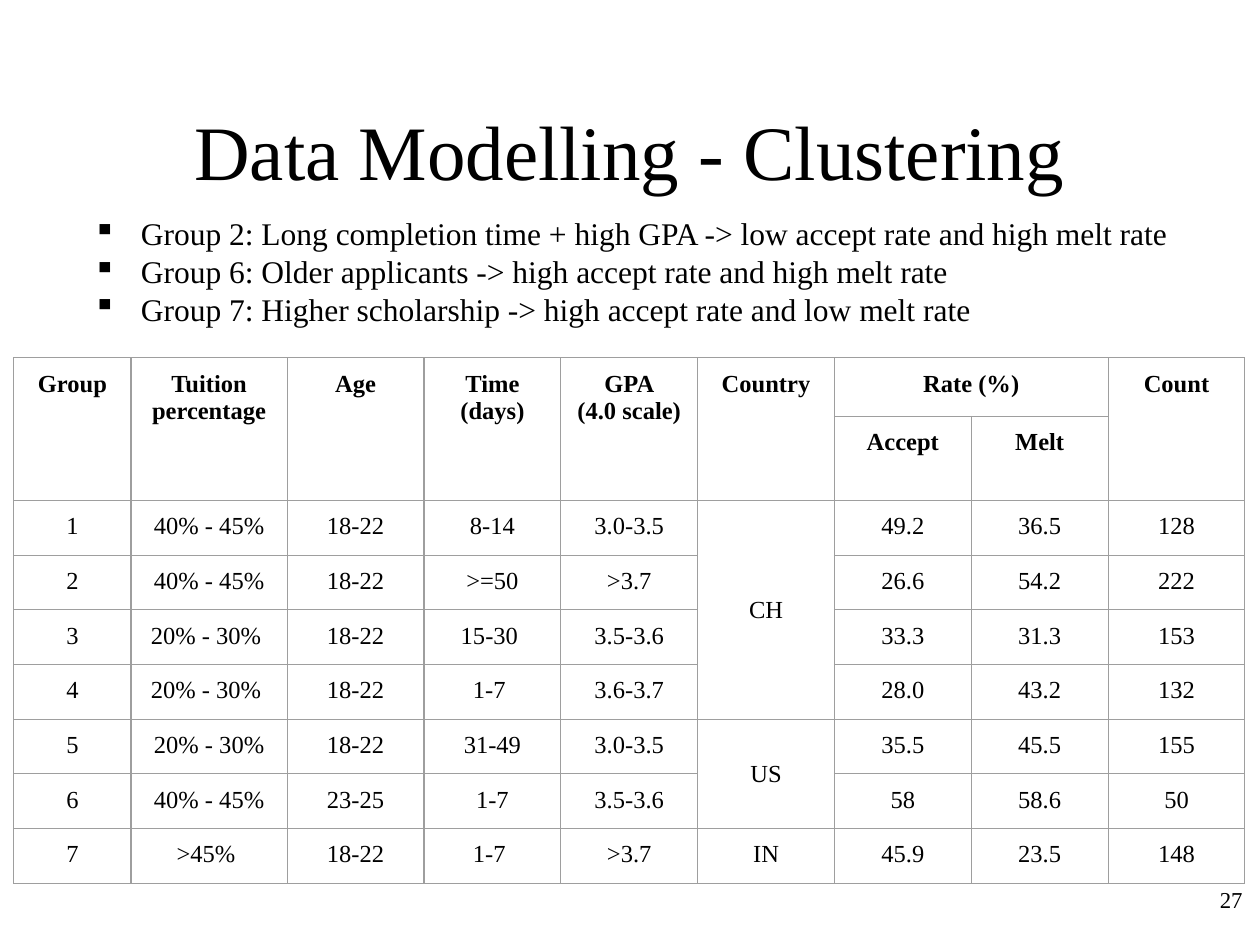
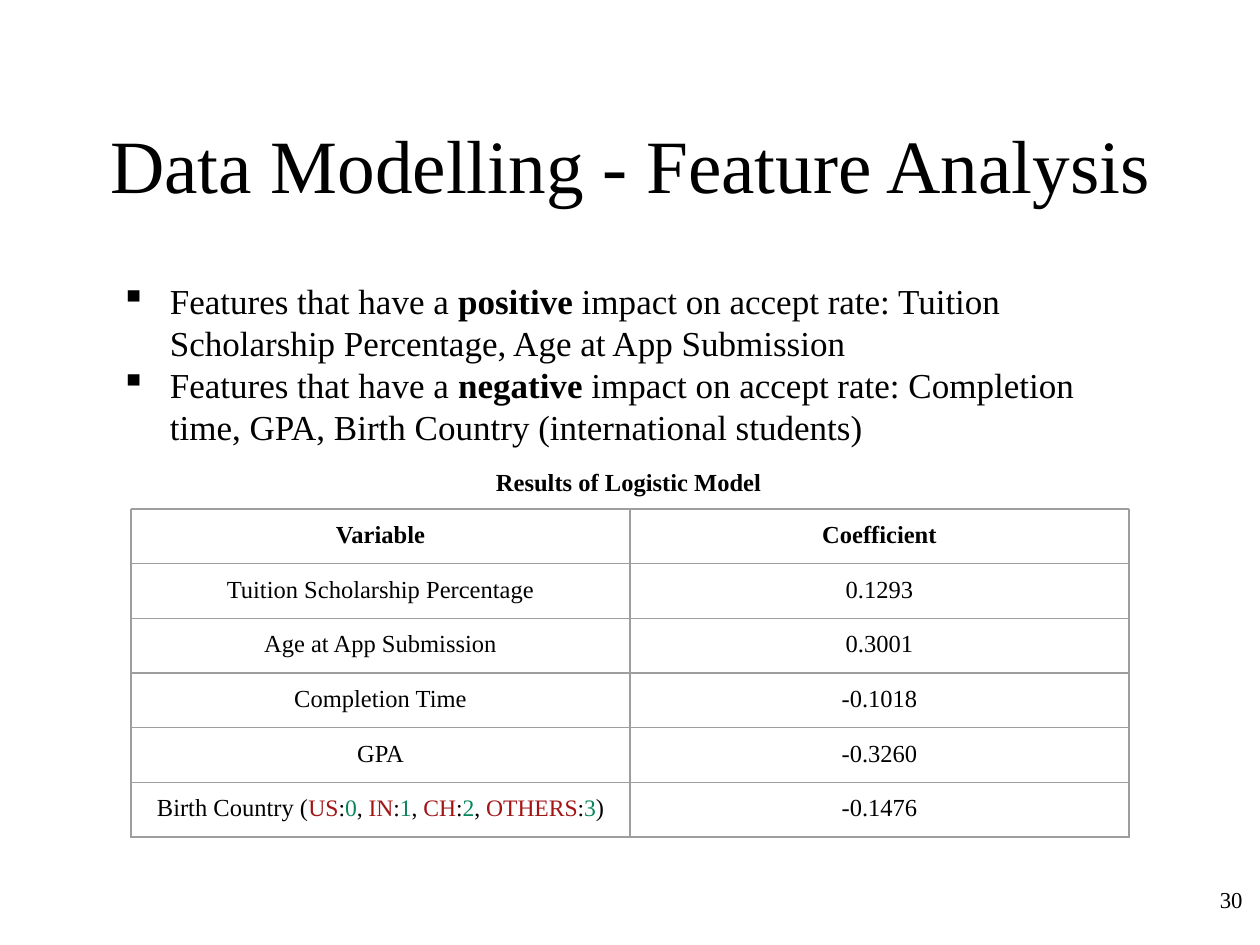
from dataclasses import dataclass
from typing import NamedTuple

from lxml.etree import SubElement
from pptx import Presentation
from pptx.dml.color import RGBColor
from pptx.enum.text import MSO_ANCHOR, PP_ALIGN
from pptx.oxml import parse_xml
from pptx.oxml.ns import nsdecls, qn
from pptx.util import Emu, Inches, Pt

SLIDE_WIDTH, SLIDE_HEIGHT = Inches(10), Inches(7.5)
COLUMN, ROW = SLIDE_WIDTH / 100, SLIDE_HEIGHT / 75
FONT = "Times New Roman"
COLORS = {"text": "000000", "border": "9E9E9E", "country": "A31515", "code": "098658"}
CELL_SIZE = 14
BORDER_WIDTH = 0.75
TEXT_INSET, CELL_INSET = 0.5, 1


class Run(NamedTuple):
    text: str
    bold: bool = False
    color: str = "text"
    size: float | None = None


class Box(NamedTuple):
    """Place and size in grid columns and rows."""
    left: float
    top: float
    width: float
    height: float


class Span(NamedTuple):
    top: int
    left: int
    bottom: int
    right: int


@dataclass
class TableSpec:
    left: float
    top: float
    column_widths: list[float]
    row_heights: list[float]
    cells: list[list]
    header_rows: int = 1
    spans: tuple[Span, ...] = ()


def across(columns: float) -> Emu:
    return Emu(round(columns * COLUMN))


def down(rows: float) -> Emu:
    return Emu(round(rows * ROW))


def add_bullet(paragraph, hanging: float) -> None:
    properties = paragraph._p.get_or_add_pPr()
    properties.set("marL", str(across(5)))
    properties.set("indent", str(-across(hanging)))
    color = SubElement(SubElement(properties, qn("a:buClr")), qn("a:srgbClr"))
    color.set("val", COLORS["text"])
    SubElement(properties, qn("a:buChar")).set("char", "▪")


def write_text(frame, paragraphs: list, *, size: float, bold: bool = False,
               align=PP_ALIGN.LEFT, hanging: float | None = None) -> None:
    """Each paragraph is a string or a list of runs; hanging adds a bullet."""
    for index, content in enumerate(paragraphs):
        paragraph = frame.paragraphs[0] if index == 0 else frame.add_paragraph()
        paragraph.alignment = align
        if hanging is not None:
            add_bullet(paragraph, hanging)
        runs = [Run(content, bold)] if isinstance(content, str) else content
        for item in runs:
            run = paragraph.add_run()
            run.text = item.text
            run.font.name = FONT
            run.font.size = Pt(item.size or size)
            run.font.bold = item.bold
            run.font.color.rgb = RGBColor.from_string(COLORS[item.color])


def set_margins(target, side: float, vertical: float) -> None:
    target.margin_left = target.margin_right = across(side)
    target.margin_top = target.margin_bottom = down(vertical)


def add_text(slide, box: Box, paragraphs: list, *, inset: float = TEXT_INSET,
             anchor=MSO_ANCHOR.TOP, **text_format) -> None:
    shape = slide.shapes.add_textbox(across(box.left), down(box.top),
                                     across(box.width), down(box.height))
    frame = shape.text_frame
    frame.word_wrap = True
    frame.vertical_anchor = anchor
    set_margins(frame, CELL_INSET, inset)
    write_text(frame, paragraphs, **text_format)


def add_borders(cell) -> None:
    properties = cell._tc.get_or_add_tcPr()
    for index, side in enumerate(("lnL", "lnR", "lnT", "lnB")):
        properties.insert(index, parse_xml(
            f'<a:{side} {nsdecls("a")} w="{Pt(BORDER_WIDTH)}"><a:solidFill>'
            f'<a:srgbClr val="{COLORS["border"]}"/></a:solidFill></a:{side}>'))


def add_table(slide, spec: TableSpec) -> None:
    frame = slide.shapes.add_table(
        len(spec.row_heights), len(spec.column_widths), across(spec.left), down(spec.top),
        across(sum(spec.column_widths)), down(sum(spec.row_heights)))
    table = frame.table
    table.first_row = table.horz_banding = False
    for column, width in zip(table.columns, spec.column_widths):
        column.width = across(width)
    for row, height in zip(table.rows, spec.row_heights):
        row.height = down(height)
    for span in spec.spans:
        table.cell(span.top, span.left).merge(table.cell(span.bottom, span.right))
    for row_index, values in enumerate(spec.cells):
        header = row_index < spec.header_rows
        for column_index, value in enumerate(values):
            cell = table.cell(row_index, column_index)
            cell.fill.background()
            add_borders(cell)
            set_margins(cell, CELL_INSET, CELL_INSET)
            if value is None:
                continue
            if not header and cell.is_merge_origin:
                cell.vertical_anchor = MSO_ANCHOR.MIDDLE
            paragraphs = value.split("\n") if isinstance(value, str) else [value]
            write_text(cell.text_frame, paragraphs, size=CELL_SIZE, bold=header,
                       align=PP_ALIGN.CENTER)


def add_titled_slide(presentation, title: str, number: int, *, top: float, size: float):
    slide = presentation.slides.add_slide(presentation.slide_layouts[6])
    add_text(slide, Box(7.5, top, 85, 12.5), [title], size=size,
             align=PP_ALIGN.CENTER, anchor=MSO_ANCHOR.MIDDLE)
    add_text(slide, Box(93.6, 69.3, 6, 5.7), [str(number)], size=13,
             align=PP_ALIGN.RIGHT, inset=CELL_INSET)
    return slide


CLUSTERS = TableSpec(
    left=1.1, top=28.4,
    column_widths=[9.3, 12.4] + [10.86] * 7,
    row_heights=[4.65, 6.3] + [4.14] * 7,
    header_rows=2,
    cells=[
        ["Group", "Tuition\npercentage", "Age", "Time\n(days)", "GPA\n(4.0 scale)",
         "Country", "Rate (%)", None, "Count"],
        [None] * 6 + ["Accept", "Melt", None],
        ["1", "40% - 45%", "18-22", "8-14", "3.0-3.5", "CH", "49.2", "36.5", "128"],
        ["2", "40% - 45%", "18-22", ">=50", ">3.7", None, "26.6", "54.2", "222"],
        ["3", "20% - 30% ", "18-22", "15-30 ", "3.5-3.6", None, "33.3", "31.3", "153"],
        ["4", "20% - 30% ", "18-22", "1-7 ", "3.6-3.7", None, "28.0", "43.2", "132"],
        ["5", "20% - 30%", "18-22", "31-49", "3.0-3.5", "US", "35.5", "45.5", "155"],
        ["6", "40% - 45%", "23-25", "1-7", "3.5-3.6", None, "58", "58.6", "50"],
        ["7", ">45% ", "18-22", "1-7 ", ">3.7", "IN", "45.9", "23.5", "148"],
    ],
    spans=(*(Span(0, column, 1, column) for column in (0, 1, 2, 3, 4, 5, 8)),
           Span(0, 6, 0, 7), Span(2, 5, 5, 5), Span(6, 5, 7, 5)),
)


def country_code_runs() -> list[Run]:
    runs = [Run("Birth Country (")]
    for code, country in enumerate(("US", "IN", "CH", "OTHERS")):
        if code:
            runs.append(Run(", ", size=13.5))
        runs += [Run(country, color="country", size=13.5), Run(":", size=13.5),
                 Run(str(code), color="code", size=13.5)]
    return runs + [Run(")")]


COEFFICIENTS = TableSpec(
    left=10.4, top=40.4,
    column_widths=[39.6] * 2,
    row_heights=[4.17] * 6,
    cells=[
        ["Variable", "Coefficient"],
        ["Tuition Scholarship Percentage", "0.1293"],
        ["Age at App Submission", "0.3001"],
        ["Completion Time", "-0.1018"],
        ["GPA", "-0.3260"],
        [country_code_runs(), "-0.1476"],
    ],
)


def feature_bullet(effect: str, features: str) -> list[Run]:
    return [Run("Features that have a "), Run(effect, bold=True),
            Run(f" impact on accept rate: {features}")]


def build_clustering_slide(presentation) -> None:
    slide = add_titled_slide(presentation, "Data Modelling - Clustering", 27, top=5.6, size=44)
    add_text(slide, Box(5.2, 16.5, 90.6, 11.3), [
        "Group 2: Long completion time + high GPA -> low accept rate and high melt rate",
        "Group 6: Older applicants -> high accept rate and high melt rate",
        "Group 7: Higher scholarship -> high accept rate and low melt rate",
    ], size=18, hanging=3.8)
    add_table(slide, CLUSTERS)


def build_feature_slide(presentation) -> None:
    slide = add_titled_slide(presentation, "Data Modelling - Feature Analysis", 30,
                             top=6.7, size=43)
    add_text(slide, Box(7.5, 21.7, 85, 45), [
        feature_bullet("positive", "Tuition Scholarship Percentage, Age at App Submission"),
        feature_bullet("negative",
                       "Completion time, GPA, Birth Country (international students)"),
    ], size=20, hanging=3.9)
    add_table(slide, COEFFICIENTS)
    add_text(slide, Box(17.9, 36.1, 64, 4.4), ["Results of Logistic Model"],
             size=CELL_SIZE, bold=True, align=PP_ALIGN.CENTER, inset=CELL_INSET)


def main() -> None:
    presentation = Presentation()
    presentation.slide_width, presentation.slide_height = SLIDE_WIDTH, SLIDE_HEIGHT
    build_clustering_slide(presentation)
    build_feature_slide(presentation)
    presentation.save("out.pptx")


if __name__ == "__main__":
    main()
